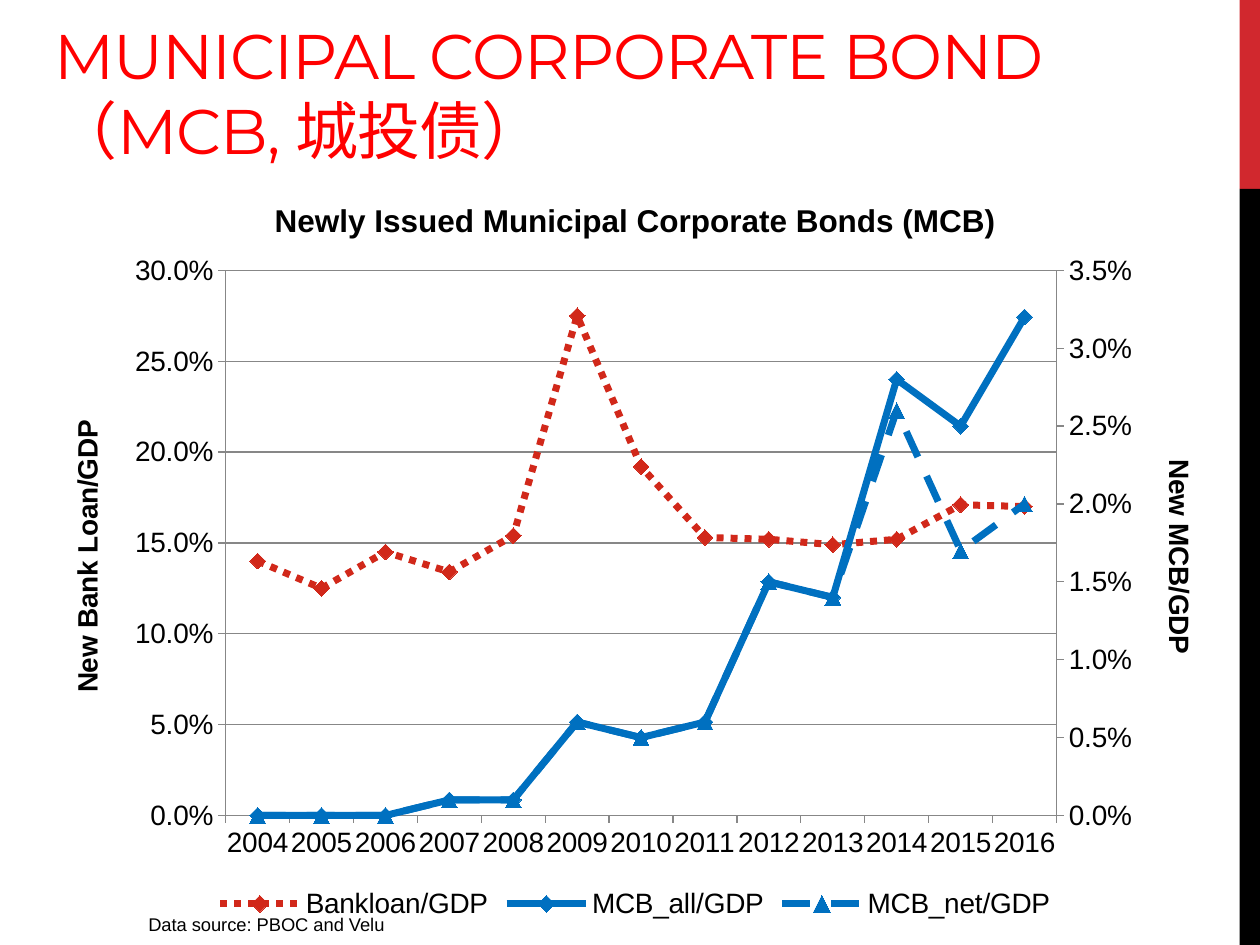
"""Build a slide with a two-axis line chart of bank loans and municipal corporate bonds."""
from copy import deepcopy

from pptx import Presentation, util as u
from pptx.chart import data
from pptx.dml import color as dml
from pptx.enum import chart as kinds, dml as lines, shapes, text
from pptx.oxml import parse_xml
from pptx.oxml.ns import nsdecls

RED, BLUE, BLACK, GREY = "D1282E", "0070C0", "000000", "878787"


def paint(fill, color):
    fill.solid()
    fill.fore_color.rgb = dml.RGBColor.from_string(color)


def write(frame, words, size=16, font="Arial", color=BLACK, bold=False):
    para = frame.paragraphs[0]
    span = para.add_run()
    span.text = words
    span.font.size, span.font.name, span.font.bold = u.Pt(size), font, bold
    paint(span.font.fill, color)


deck = Presentation()
deck.slide_width, deck.slide_height = u.Cm(25.4), u.Cm(19.05)
page = deck.slides.add_slide(deck.slide_layouts[5])

for top, height, color in [(0, 3.81, RED), (3.81, 15.24, BLACK)]:
    bar = page.shapes.add_shape(
        shapes.MSO_SHAPE.RECTANGLE, u.Cm(24.99), u.Cm(top), u.Cm(0.41), u.Cm(height))
    bar.shadow.inherit = False
    paint(bar.fill, color)
    bar.line.fill.background()

title = page.shapes.title
title.left, title.top, title.width, title.height = u.Cm(0.84), u.Cm(0.43), u.Cm(23.29), u.Cm(3.07)
frame = title.text_frame
frame.auto_size = text.MSO_AUTO_SIZE.NONE
frame.vertical_anchor = text.MSO_ANCHOR.BOTTOM
frame.paragraphs[0].alignment = text.PP_ALIGN.LEFT
write(frame, "MUNICIPAL CORPORATE BOND（MCB, 城投债）", size=36, font="Montserrat", color="FF0000")
title.element.xpath(".//a:rPr")[0].set("spc", "-60")

source = page.shapes.add_textbox(u.Cm(2.74), u.Cm(18.29), u.Cm(9.09), u.Cm(0.71))
source.text_frame.word_wrap = True
write(source.text_frame, "Data source: PBOC and Velu", size=10.5)

bonds = [0, 0, 0, 0.001, 0.001, 0.006, 0.005, 0.006, 0.015, 0.014]
figures = data.CategoryChartData(number_format="0.0%")
figures.categories = [str(year) for year in range(2004, 2017)]
figures.add_series("Bankloan/GDP", [0.14, 0.125, 0.145, 0.134, 0.154, 0.275, 0.192,
                                    0.153, 0.152, 0.149, 0.152, 0.171, 0.17])
figures.add_series("MCB_all/GDP", bonds + [0.028, 0.025, 0.032])
figures.add_series("MCB_net/GDP", bonds + [0.026, 0.017, 0.02])
chart = page.shapes.add_chart(
    kinds.XL_CHART_TYPE.LINE_MARKERS,
    u.Cm(0.84), u.Cm(3.48), u.Cm(23.93), u.Cm(15.16), figures).chart
chart.font.size, chart.font.name = u.Pt(10), "Arial"
paint(chart.font.fill, BLACK)
write(chart.chart_title.text_frame, "Newly Issued Municipal Corporate Bonds (MCB)", size=18, bold=True)
chart.has_legend = True
chart.legend.position = kinds.XL_LEGEND_POSITION.BOTTOM
chart.legend.include_in_layout = False
chart.legend.font.size = u.Pt(16)

loans = chart.value_axis
for axis in (chart.category_axis, loans):
    axis.tick_labels.font.size = u.Pt(16)
    axis.major_tick_mark = kinds.XL_TICK_MARK.OUTSIDE
    axis.minor_tick_mark = kinds.XL_TICK_MARK.NONE
    paint(axis.format.line.fill, GREY)
loans.minimum_scale, loans.maximum_scale, loans.major_unit = 0, 0.3, 0.05
loans.tick_labels.number_format = "0.0%"
loans.tick_labels.number_format_is_linked = False
paint(loans.major_gridlines.format.line.fill, GREY)
write(loans.axis_title.text_frame, "New Bank Loan/GDP", bold=True)

diamond, triangle = kinds.XL_MARKER_STYLE.DIAMOND, kinds.XL_MARKER_STYLE.TRIANGLE
dots, dashes = lines.MSO_LINE.ROUND_DOT, lines.MSO_LINE.DASH
looks = [("D1281A", dots, diamond, RED), (BLUE, None, diamond, BLUE), (BLUE, dashes, triangle, BLUE)]
for series, (color, dash, marker, marker_color) in zip(chart.plots[0].series, looks):
    series.smooth = False
    paint(series.format.line.fill, color)
    series.format.line.width = u.Pt(4)
    series.format.line.dash_style = dash
    series.marker.style, series.marker.size = marker, 9
    paint(series.marker.format.fill, marker_color)
    paint(series.marker.format.line.fill, marker_color)
chart.plots[0].vary_by_categories = False

area = chart.element.xpath(".//c:plotArea")[0]
left_plot, years, left_axis = area.xpath("./c:lineChart | ./c:catAx | ./c:valAx")
left_axis.xpath("./c:title//a:bodyPr")[0].set("rot", "-5400000")
right_plot, hidden_years, right_axis = [deepcopy(part) for part in (left_plot, years, left_axis)]
left_plot.addnext(right_plot)
left_axis.addnext(right_axis)
right_axis.addnext(hidden_years)
for series in left_plot.xpath("./c:ser")[1:] + right_plot.xpath("./c:ser")[:1]:
    series.getparent().remove(series)
for part in (right_plot, hidden_years, right_axis):
    for link in part.xpath("./c:axId | ./c:crossAx"):
        link.set("val", "5001" if link.get("val") == years.xpath("./c:axId")[0].get("val") else "5002")
hidden_years.xpath("./c:delete")[0].set("val", "1")
for tag, value in [("axPos", "r"), ("crosses", "max"), ("scaling/c:max", "0.035"), ("majorUnit", "0.005")]:
    right_axis.xpath(f"./c:{tag}")[0].set("val", value)
right_axis.remove(right_axis.xpath("./c:majorGridlines")[0])
right_axis.xpath("./c:title//a:bodyPr")[0].set("rot", "5400000")
right_axis.xpath("./c:title//a:t")[0].text = "New MCB/GDP"

for layout in area.xpath("./c:layout"):
    area.remove(layout)
sides = "".join(f'<c:{side} val="{share}"/>' for side, share in
                [("x", 0.155), ("y", 0.13), ("w", 0.7), ("h", 0.725)])
area.insert(0, parse_xml(
    f'<c:layout {nsdecls("c")}><c:manualLayout><c:layoutTarget val="inner"/>'
    f'<c:xMode val="edge"/><c:yMode val="edge"/>{sides}</c:manualLayout></c:layout>'))

deck.save("out.pptx")
